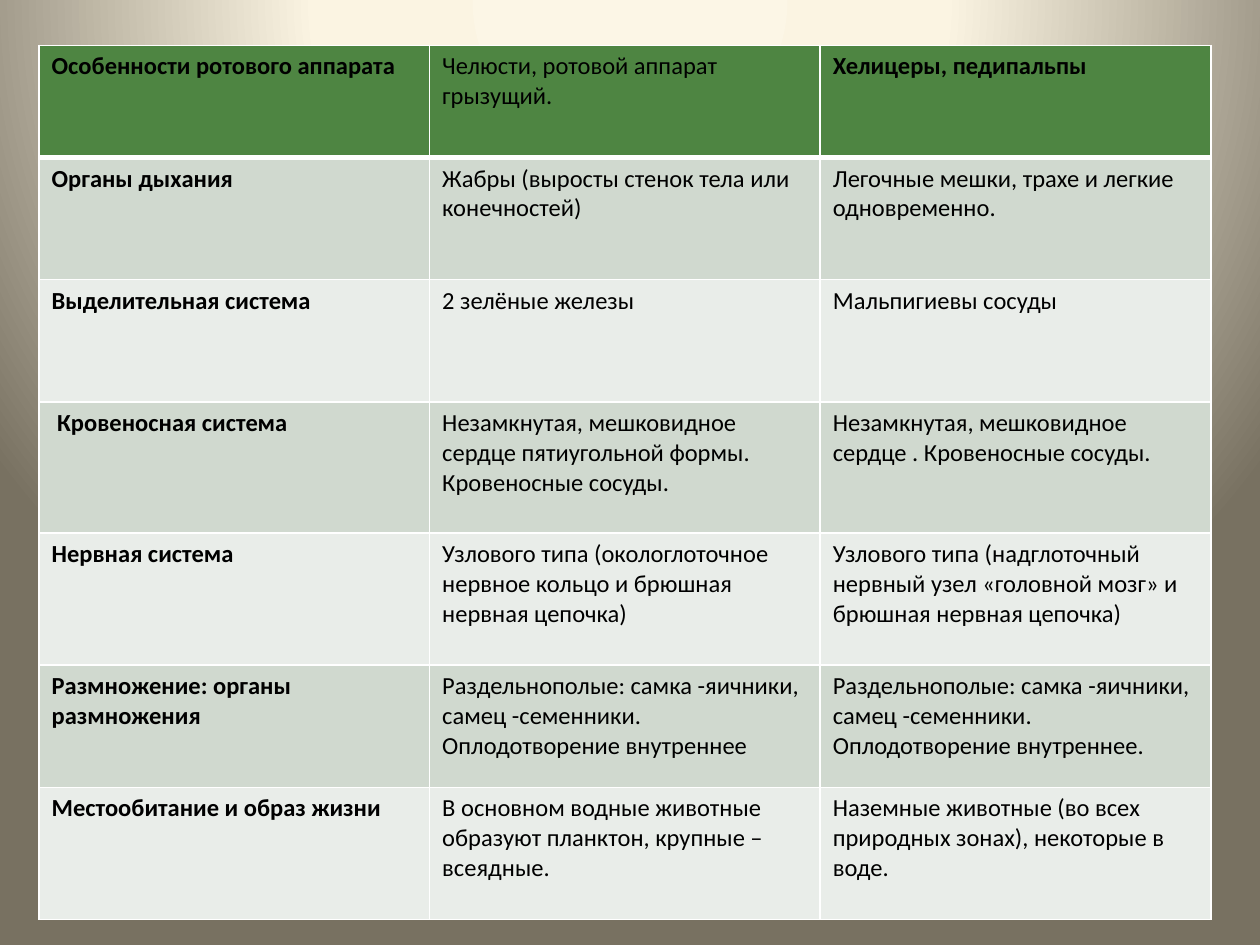
from lxml import etree
from pptx import Presentation
from pptx.dml.color import RGBColor
from pptx.oxml import parse_xml
from pptx.oxml.ns import nsdecls, qn
from pptx.util import Inches, Pt

COLORS = {
    "text": "000000",
    "header": "4E8542",
    "band_dark": "D0D9CF",
    "band_light": "E9EDE9",
    "border": "FFFFFF",
}
BACKGROUND_STOPS = [(0, "FCF6E6"), (40, "FBF4E2"), (100, "787161")]
BACKGROUND_FOCUS = {"l": 50, "t": -80, "r": 50, "b": 180}

COLUMN_WIDTH = 3.1
ROW_HEIGHTS = [0.89, 0.97, 0.97, 1.04, 1.05, 0.97, 1.05]
FONT = {"name": "Calibri", "size": Pt(14)}
THIN, THICK = 1, 3

COMPARISON = [
    ("Особенности ротового аппарата",
     "Челюсти, ротовой аппарат грызущий.",
     "Хелицеры, педипальпы"),
    ("Органы дыхания",
     "Жабры (выросты стенок тела или конечностей)",
     "Легочные мешки, трахе и легкие одновременно."),
    ("Выделительная система",
     "2 зелёные железы",
     "Мальпигиевы сосуды"),
    (" Кровеносная система",
     "Незамкнутая, мешковидное сердце пятиугольной формы. Кровеносные сосуды.",
     "Незамкнутая, мешковидное сердце . Кровеносные сосуды."),
    ("Нервная система",
     "Узлового типа (окологлоточное нервное кольцо и брюшная нервная цепочка)",
     "Узлового типа (надглоточный нервный узел «головной мозг» и брюшная нервная цепочка)"),
    ("Размножение: органы размножения",
     "Раздельнополые: самка -яичники, самец -семенники. Оплодотворение внутреннее",
     "Раздельнополые: самка -яичники, самец -семенники. Оплодотворение внутреннее."),
    ("Местообитание и образ жизни",
     "В основном водные животные образуют планктон, крупные –всеядные.",
     "Наземные животные (во всех природных зонах), некоторые в воде."),
]


def paint_background(slide):
    """Fill the background with a radial gradient centred above the slide."""
    slide.background.fill.gradient()
    gradient = slide.element.find(".//" + qn("a:gradFill"))
    for child in list(gradient):
        gradient.remove(child)
    stops = etree.SubElement(gradient, qn("a:gsLst"))
    for position, color in BACKGROUND_STOPS:
        stop = etree.SubElement(stops, qn("a:gs"), pos=str(position * 1000))
        etree.SubElement(stop, qn("a:srgbClr"), val=color)
    circle = etree.SubElement(gradient, qn("a:path"))
    circle.set("path", "circle")
    focus = etree.SubElement(circle, qn("a:fillToRect"))
    for side, percent in BACKGROUND_FOCUS.items():
        focus.set(side, str(percent * 1000))


def set_borders(cell, widths):
    """Draw the cell borders, given as points by side (L, R, T, B)."""
    properties = cell._tc.get_or_add_tcPr()
    for index, (side, width) in enumerate(widths.items()):
        properties.insert(index, parse_xml(
            f'<a:ln{side} {nsdecls("a")} w="{Pt(width)}"><a:solidFill>'
            f'<a:srgbClr val="{COLORS["border"]}"/></a:solidFill></a:ln{side}>'))


def fill_cell(cell, text, color, bold):
    cell.fill.solid()
    cell.fill.fore_color.rgb = RGBColor.from_string(COLORS[color])
    run = cell.text_frame.paragraphs[0].add_run()
    run.text = text
    for attribute, value in FONT.items():
        setattr(run.font, attribute, value)
    run.font.bold = bold
    run.font.color.rgb = RGBColor.from_string(COLORS["text"])


def row_color(row):
    if row == 0:
        return "header"
    return "band_dark" if row % 2 else "band_light"


def add_comparison_table(slide):
    column_count = len(COMPARISON[0])
    table = slide.shapes.add_table(
        len(COMPARISON), column_count, Inches(0.31), Inches(0.36),
        Inches(COLUMN_WIDTH * column_count), Inches(sum(ROW_HEIGHTS))).table
    for column in table.columns:
        column.width = Inches(COLUMN_WIDTH)
    for row, texts in enumerate(COMPARISON):
        table.rows[row].height = Inches(ROW_HEIGHTS[row])
        borders = {"L": THIN, "R": THIN,
                   "T": THICK if row == 1 else THIN,
                   "B": THICK if row == 0 else THIN}
        for column, text in enumerate(texts):
            cell = table.cell(row, column)
            bold = column == 0 or (row == 0 and column == 2)
            fill_cell(cell, text, row_color(row), bold)
            set_borders(cell, borders)


def main():
    presentation = Presentation()
    presentation.slide_width = Inches(10)
    presentation.slide_height = Inches(7.5)
    slide = presentation.slides.add_slide(presentation.slide_layouts[6])
    paint_background(slide)
    add_comparison_table(slide)
    presentation.save("out.pptx")


if __name__ == "__main__":
    main()
